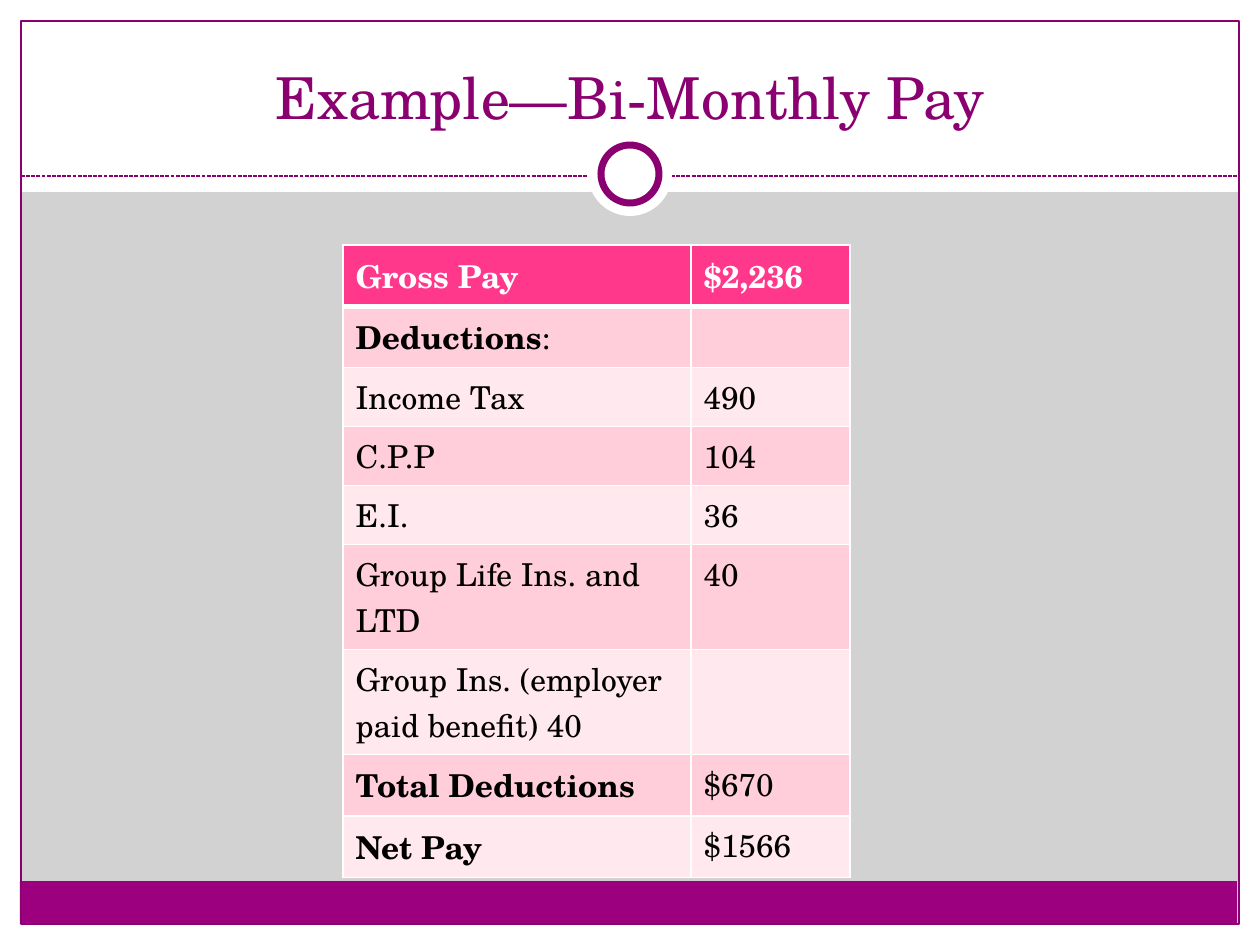
from dataclasses import dataclass

from lxml import etree
from pptx import Presentation, util as u
from pptx.dml.color import RGBColor
from pptx.enum import dml, shapes, text
from pptx.oxml.ns import qn


@dataclass(frozen=True)
class Theme:
    font: str = "TeX Gyre Schola"
    title_size: float = 33
    body_size: float = 18
    white: str = "FFFFFF"
    black: str = "000000"
    backdrop: str = "D2D2D2"
    purple: str = "8A0070"
    footer: str = "9C007F"
    header: str = "FF388C"
    bands: tuple = ("FFCEDA", "FFE8EE")


theme = Theme()
PX = 914400 / 126
W, H, MARGIN = 1260, 945, 21


def add_block(kind, box, fill=None, line=None, weight=0.75):
    block = slide.shapes.add_shape(kind, *(round(v * PX) for v in box))
    block.shadow.inherit = False
    if fill:
        block.fill.solid()
        block.fill.fore_color.rgb = RGBColor.from_string(fill)
    else:
        block.fill.background()
    if line:
        block.line.color.rgb = RGBColor.from_string(line)
        block.line.width = u.Pt(weight)
    else:
        block.line.fill.background()


def add_run(paragraph, words, size, color, bold=False):
    run = paragraph.add_run()
    run.text = words
    run.font.name = theme.font
    run.font.size = u.Pt(size)
    run.font.bold = bold
    run.font.color.rgb = RGBColor.from_string(color)


prs = Presentation()
prs.slide_width, prs.slide_height = round(W * PX), round(H * PX)
slide = prs.slides.add_slide(prs.slide_layouts[5])
slide.background.fill.solid()
slide.background.fill.fore_color.rgb = RGBColor.from_string(theme.backdrop)

# White margins and title band, footer bar, frame
rect, oval = shapes.MSO_SHAPE.RECTANGLE, shapes.MSO_SHAPE.OVAL
for margin in [(0, H - MARGIN, W, MARGIN), (0, 0, W, 192),
               (0, 0, MARGIN, H), (W - MARGIN, 0, MARGIN, H)]:
    add_block(rect, margin, theme.white)
add_block(rect, (20, 881, 1217, 43), theme.footer)
add_block(rect, (MARGIN, MARGIN, W - 2 * MARGIN, H - 2 * MARGIN), line=theme.purple)

# Dashed divider with ring
divider = slide.shapes.add_connector(
    shapes.MSO_CONNECTOR.STRAIGHT,
    *(round(v * PX) for v in (MARGIN, 176, W - MARGIN, 176)))
divider.line.color.rgb = RGBColor.from_string(theme.purple)
divider.line.width = u.Pt(0.75)
divider.line.dash_style = dml.MSO_LINE.SQUARE_DOT
etree.SubElement(divider._element.spPr, qn("a:effectLst"))
add_block(oval, (588, 132, 84, 84), theme.white)
add_block(oval, (601, 145, 58, 58), theme.white, theme.purple, 4)

# Title, brought in front of the white band
title = slide.shapes.title
slide.shapes._spTree.append(title._element)
title.left, title.top, title.width, title.height = (
    round(v * PX) for v in (42, 32, 1176, 105))
title.text_frame.vertical_anchor = text.MSO_ANCHOR.BOTTOM
heading = title.text_frame.paragraphs[0]
heading.alignment = text.PP_ALIGN.CENTER
add_run(heading, "Example—Bi-Monthly Pay", theme.title_size, theme.purple)

# Pay table: each cell is a list of (words, bold) runs
pay_rows = [
    ([("Gross Pay", True)], [("$2,236", True)]),
    ([("Deductions", True), (":", False)], []),
    ([("Income Tax", False)], [("490", False)]),
    ([("C.P.P", False)], [("104", False)]),
    ([("E.I.", False)], [("36", False)]),
    ([("Group Life Ins. and LTD", False)], [("40", False)]),
    ([("Group Ins. (employer paid benefit) 40", False)], []),
    ([("Total Deductions", True)], [("$670", False)]),
    ([("Net Pay", True)], [("$1566", False)]),
]
col_widths, row_height = (348, 159), 52
pay = slide.shapes.add_table(
    len(pay_rows), len(col_widths),
    *(round(v * PX) for v in (343, 245, sum(col_widths), row_height * len(pay_rows)))).table
for column, width in zip(pay.columns, col_widths):
    column.width = round(width * PX)

for r, entries in enumerate(pay_rows):
    pay.rows[r].height = round(row_height * PX)
    fill = theme.bands[(r - 1) % 2] if r else theme.header
    color = theme.black if r else theme.white
    for c, runs in enumerate(entries):
        cell = pay.cell(r, c)
        paragraph = cell.text_frame.paragraphs[0]
        for words, bold in runs:
            add_run(paragraph, words, theme.body_size, color, bold)
        if not runs:
            paragraph.font.size = u.Pt(theme.body_size)
        # Borders come before the fill in the cell properties
        props = cell._tc.get_or_add_tcPr()
        for side in "LRTB":
            thick = (r, side) in [(0, "B"), (1, "T")]
            border = etree.SubElement(props, qn(f"a:ln{side}"), w=str(u.Pt(3 if thick else 1)))
            paint = etree.SubElement(border, qn("a:solidFill"))
            etree.SubElement(paint, qn("a:srgbClr"), val=theme.white)
        cell.fill.solid()
        cell.fill.fore_color.rgb = RGBColor.from_string(fill)

prs.save("out.pptx")
